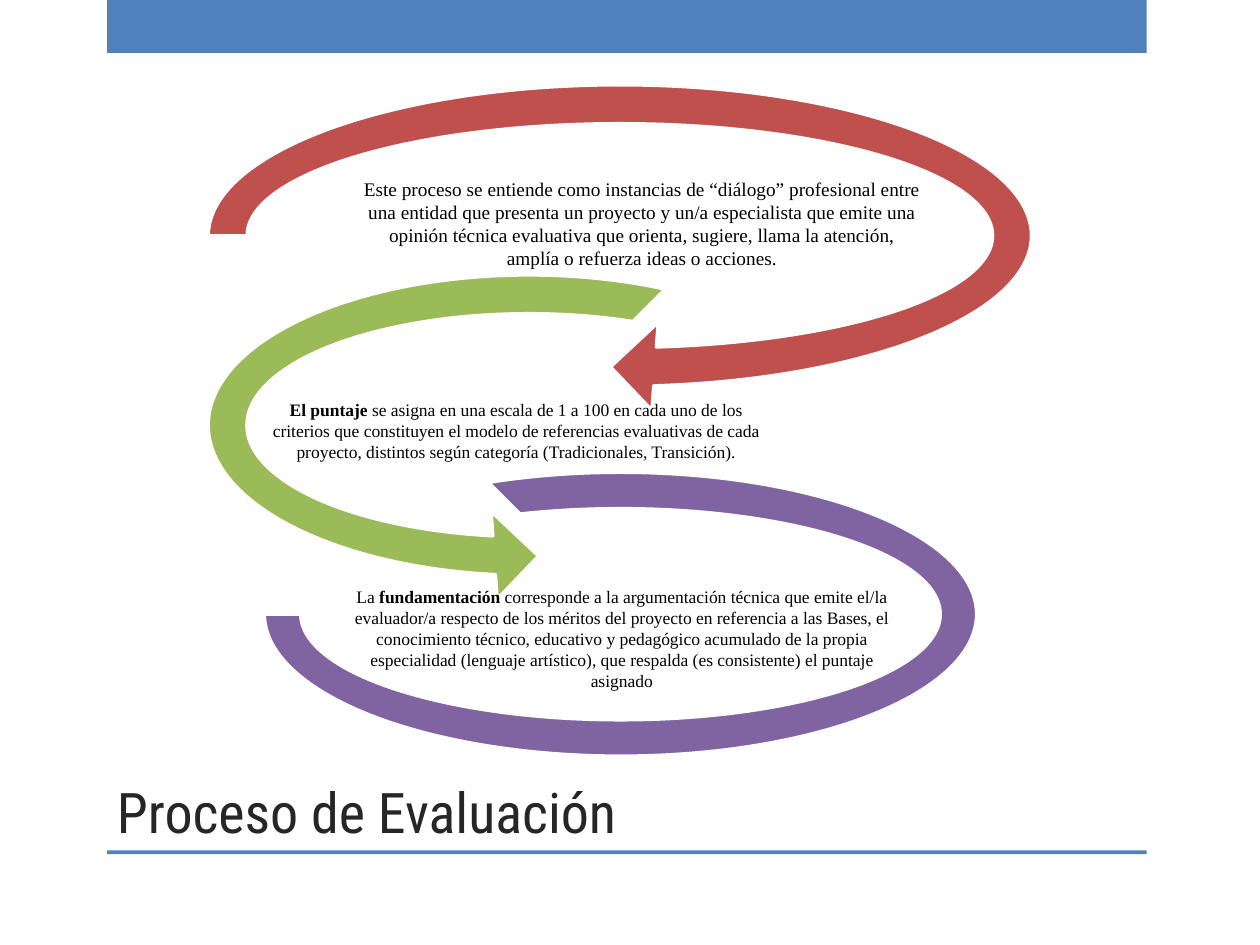
from pptx import Presentation
from pptx.dml.color import RGBColor
from pptx.enum import shapes, text
from pptx.util import Inches, Pt

BLUE = "4F81BD"
BODY_FONT = "Times New Roman"


def color(value):
    """Turn a hex string into a colour."""
    return RGBColor.from_string(value)


def add_filled_shape(slide, kind, box, fill, adjustments=(), outline=None):
    """Add a preset shape with a solid fill and an optional outline."""
    shape = slide.shapes.add_shape(kind, *map(Inches, box))
    shape.shadow.inherit = False
    shape.fill.solid()
    shape.fill.fore_color.rgb = color(fill)
    if outline:
        shape.line.color.rgb = color(outline)
        shape.line.width = Pt(1.75)
    else:
        shape.line.fill.background()
    for index, value in enumerate(adjustments):
        shape.adjustments[index] = value
    return shape


def add_text(slide, box, runs, size, font, fill, anchor):
    """Add a wrapped one-paragraph text box from (text, bold) runs."""
    frame = slide.shapes.add_textbox(*map(Inches, box)).text_frame
    frame.word_wrap = True
    frame.vertical_anchor = anchor
    for content, bold in runs:
        run = frame.paragraphs[0].add_run()
        run.text = content
        run.font.bold = bold
        run.font.size = Pt(size)
        run.font.name = font
        run.font.color.rgb = color(fill)
    return frame


def add_step_text(slide, box, runs, size):
    """Add the centred text of one step, set slightly above the middle."""
    frame = add_text(slide, box, runs, size, BODY_FONT, "000000",
                     text.MSO_ANCHOR.MIDDLE)
    frame.margin_left = frame.margin_right = frame.margin_top = Inches(0.01)
    frame.margin_bottom = Inches(0.15)
    frame.paragraphs[0].alignment = text.PP_ALIGN.CENTER


def main():
    """Build the evaluation process slide."""
    presentation = Presentation()
    presentation.slide_width = Inches(10)
    presentation.slide_height = Inches(7.5)
    slide = presentation.slides.add_slide(presentation.slide_layouts[6])
    kinds = shapes.MSO_SHAPE

    for top, height in ((0, 0.42), (6.75, 0.03)):
        add_filled_shape(slide, kinds.RECTANGLE, (0.85, top, 8.25, height), BLUE)
    add_text(slide, (0.83, 5, 7.42, 1.75), [("Proceso de Evaluación", False)],
             32, "Roboto Condensed", "262626", text.MSO_ANCHOR.BOTTOM)

    steps = (
        (kinds.CIRCULAR_ARROW, (1.46, 0.48, 6.92, 2.78), "C0504D",
         (0.11, 11.42, 45, 108, 0.125), (2.87, 1.31, 4.45, 1.07), 11,
         [("Este proceso se entiende como instancias de “diálogo” profesional "
           "entre una entidad que presenta un proyecto y un/a especialista que "
           "emite una opinión técnica evaluativa que orienta, sugiere, llama la "
           "atención, amplía o refuerza ideas o acciones.", False)]),
        (kinds.LEFT_CIRCULAR_ARROW, (1.46, 1.99, 5.48, 2.77), "9BBB59",
         (0.11, 11.42, 63, 189, 0.125), (2.09, 3.12, 4.01, 0.73), 10,
         [("El puntaje", True),
          (" se asigna en una escala de 1 a 100 en cada uno de los criterios "
           "que constituyen el modelo de referencias evaluativas de cada "
           "proyecto, distintos según categoría (Tradicionales, Transición).",
           False)]),
        (kinds.BLOCK_ARC, (2.1, 3.75, 5.65, 2.25), "8064A2",
         (135, 108, 0.127), (2.72, 4.77, 4.43, 0.73), 10,
         [("La ", False), ("fundamentación ", True),
          ("corresponde a la argumentación técnica que emite el/la "
           "evaluador/a respecto de los méritos del proyecto en referencia a "
           "las Bases, el conocimiento técnico, educativo y pedagógico "
           "acumulado de la propia especialidad (lenguaje artístico), que "
           "respalda (es consistente) el puntaje asignado", False)]),
    )
    for kind, arrow_box, fill, adjustments, text_box, size, runs in steps:
        add_filled_shape(slide, kind, arrow_box, fill, adjustments, "FFFFFF")
        add_step_text(slide, text_box, runs, size)

    presentation.save("out.pptx")


if __name__ == "__main__":
    main()
